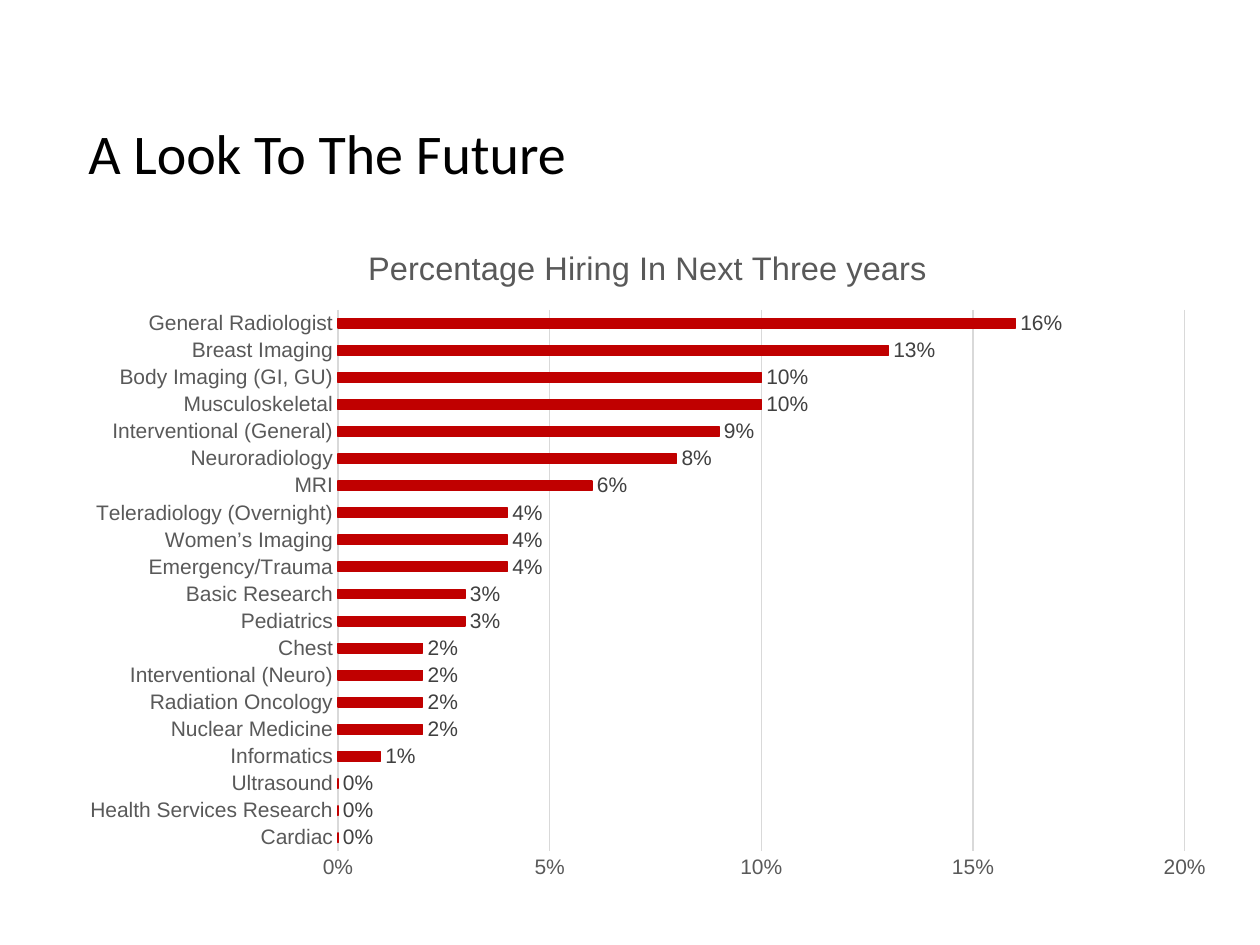
from pptx import Presentation
from pptx.chart.data import CategoryChartData
from pptx.dml.color import RGBColor
from pptx.enum.chart import XL_CHART_TYPE, XL_LABEL_POSITION, XL_TICK_MARK
from pptx.enum.text import MSO_ANCHOR
from pptx.util import Pt

BAR = XL_CHART_TYPE.BAR_CLUSTERED
OUTSIDE_END = XL_LABEL_POSITION.OUTSIDE_END
NO_TICK = XL_TICK_MARK.NONE
MIDDLE = MSO_ANCHOR.MIDDLE
PX = 914400 / 126  # 126 px to the inch


def px(*lengths):
    return [round(length * PX) for length in lengths]


def style_font(font, size, color, name="Arial"):
    settings = {"size": Pt(size), "name": name, "bold": False}
    for key, value in settings.items():
        setattr(font, key, value)
    font.color.rgb = RGBColor.from_string(color)


# Slide
prs = Presentation()
prs.slide_width, prs.slide_height = px(1260, 945)
slide = prs.slides.add_slide(prs.slide_layouts[6])

# Hiring forecast, listed from the bottom bar up
hiring = [
    ("Cardiac", 0),
    ("Health Services Research", 0),
    ("Ultrasound", 0),
    ("Informatics", 0.01),
    ("Nuclear Medicine", 0.02),
    ("Radiation Oncology", 0.02),
    ("Interventional (Neuro)", 0.02),
    ("Chest", 0.02),
    ("Pediatrics", 0.03),
    ("Basic Research", 0.03),
    ("Emergency/Trauma", 0.04),
    ("Women’s Imaging", 0.04),
    ("Teleradiology (Overnight)", 0.04),
    ("MRI", 0.06),
    ("Neuroradiology", 0.08),
    ("Interventional (General)", 0.09),
    ("Musculoskeletal", 0.1),
    ("Body Imaging (GI, GU)", 0.1),
    ("Breast Imaging", 0.13),
    ("General Radiologist", 0.16),
]
data = CategoryChartData(number_format="0%")
data.categories = [specialty for specialty, share in hiring]
data.add_series("Series 1", [share for specialty, share in hiring])
chart = slide.shapes.add_chart(BAR, *px(67, 220, 1162, 672), data).chart
chart.has_legend = False
style_font(chart.font, 10, "000000")

# Chart title
chart.has_title = True
chart.chart_title.include_in_layout = False
caption = chart.chart_title.text_frame
caption.text = "Percentage Hiring In Next Three years"
style_font(caption.paragraphs[0].runs[0].font, 18.6, "595959")

# Axes
specialties, shares = chart.category_axis, chart.value_axis
for axis in (specialties, shares):
    axis.major_tick_mark = axis.minor_tick_mark = NO_TICK
    style_font(axis.tick_labels.font, 12, "595959")
scale = {"minimum_scale": 0, "maximum_scale": 0.2, "major_unit": 0.05,
         "has_major_gridlines": True}
for key, value in scale.items():
    setattr(shares, key, value)
shares.tick_labels.number_format = "0%"
shares.tick_labels.number_format_is_linked = False
shares.format.line.fill.background()
for line in (specialties.format.line, shares.major_gridlines.format.line):
    line.color.rgb = RGBColor.from_string("D9D9D9")
    line.width = Pt(0.75)

# Bars and their labels
plot = chart.plots[0]
plot.gap_width = 182
plot.vary_by_categories = False
bars = plot.series[0]
bars.format.fill.solid()
bars.format.fill.fore_color.rgb = RGBColor.from_string("C00000")
bars.format.line.color.rgb = RGBColor.from_string("C00000")
bars.format.line.width = Pt(0.75)
label_format = {"show_value": True, "position": OUTSIDE_END,
                "number_format": "0%", "number_format_is_linked": False}
for key, value in label_format.items():
    setattr(bars.data_labels, key, value)
style_font(bars.data_labels.font, 12, "404040")

# Slide heading
heading = slide.shapes.add_textbox(*px(76, 73, 1134, 158)).text_frame
heading.word_wrap = True
heading.vertical_anchor = MIDDLE
heading.text = "A Look To The Future"
style_font(heading.paragraphs[0].runs[0].font, 32, "000000", "Calibri")

prs.save("out.pptx")
